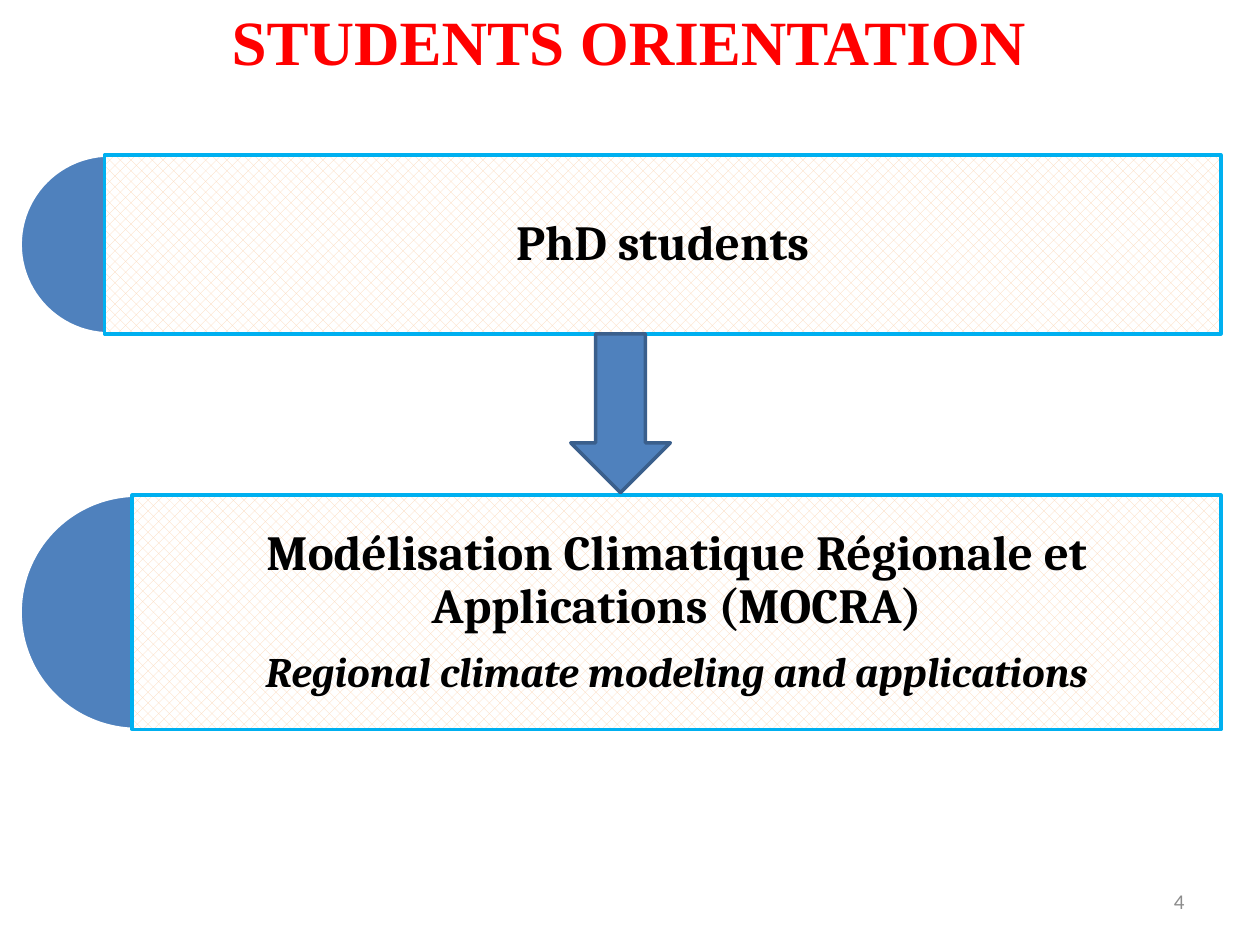
from pptx import Presentation
from pptx import util as u
from pptx.dml.color import RGBColor
from pptx.enum import dml, shapes, text

COLORS = {"title": "FF0000", "blue": "4F81BD", "edge": "3A5F8C", "frame": "00B0F0",
          "peach": "FCD5B5", "white": "FFFFFF", "black": "000000", "gray": "8C8C8C"}

deck = Presentation()
deck.slide_width, deck.slide_height = u.Inches(10), u.Inches(7.5)
slide = deck.slides.add_slide(deck.slide_layouts[5])


def rgb(name):
    return RGBColor.from_string(COLORS[name])


def write(paragraph, words, font="Cambria", size=28, color="black", bold=True,
          italic=None, align=text.PP_ALIGN.CENTER, spacing=None, after=None):
    paragraph.alignment = align
    paragraph.line_spacing = spacing
    paragraph.space_after = after
    run = paragraph.add_run()
    run.text = words
    run.font.name, run.font.size = font, u.Pt(size)
    run.font.bold, run.font.italic = bold, italic
    run.font.color.rgb = rgb(color)


heading = slide.shapes.title
heading.left, heading.top = u.Inches(0.49), u.Inches(0.02)
heading.width, heading.height = u.Inches(9), u.Inches(0.6)
heading.text_frame.margin_top = heading.text_frame.margin_bottom = 0
heading.text_frame.vertical_anchor = text.MSO_ANCHOR.MIDDLE
write(heading.text_frame.paragraphs[0], "STUDENTS ORIENTATION",
      font="Times New Roman", size=36, color="title")

left, right = 0.16, 9.69
bands = [
    (3.93, 1.86, 1.05, [("Modélisation Climatique Régionale et Applications (MOCRA)", 28, None),
                        ("Regional climate modeling and applications", 24, True)]),
    (1.23, 1.42, 0.83, [("PhD students", 28, None)]),
]
for top, height, panel_left, lines in bands:
    half_disc = slide.shapes.add_shape(
        shapes.MSO_SHAPE.PIE, u.Inches(left), u.Inches(top), u.Inches(height), u.Inches(height))
    half_disc.adjustments[0], half_disc.adjustments[1] = 54, 162
    half_disc.fill.solid()
    half_disc.fill.fore_color.rgb = rgb("blue")
    half_disc.line.color.rgb = rgb("white")

    panel = slide.shapes.add_shape(
        shapes.MSO_SHAPE.RECTANGLE, u.Inches(panel_left), u.Inches(top),
        u.Inches(right - panel_left), u.Inches(height))
    panel.fill.patterned()
    panel.fill.pattern = dml.MSO_PATTERN.from_xml("pct40")
    panel.fill.fore_color.rgb = rgb("peach")
    panel.fill.back_color.rgb = rgb("white")
    panel.line.color.rgb = rgb("frame")

    for part in (half_disc, panel):
        part.line.width = u.Pt(2)
        part.shadow.inherit = False

    frame = panel.text_frame
    frame.word_wrap = True
    frame.vertical_anchor = text.MSO_ANCHOR.MIDDLE
    frame.margin_left = frame.margin_right = u.Inches(0.12)
    frame.margin_top = frame.margin_bottom = u.Inches(0.12)
    for index, (words, size, italic) in enumerate(lines):
        paragraph = frame.add_paragraph() if index else frame.paragraphs[0]
        write(paragraph, words, size=size, italic=italic,
              spacing=0.9, after=u.Pt(size * 0.35))

arrow = slide.shapes.add_shape(
    shapes.MSO_SHAPE.DOWN_ARROW, u.Inches(4.53), u.Inches(2.65), u.Inches(0.79), u.Inches(1.26))
arrow.shadow.inherit = False
arrow.fill.solid()
arrow.fill.fore_color.rgb = rgb("blue")
arrow.line.color.rgb = rgb("edge")
arrow.line.width = u.Pt(2)

page_number = slide.shapes.add_textbox(
    u.Inches(7.17), u.Inches(6.95), u.Inches(2.33), u.Inches(0.4)).text_frame
page_number.word_wrap = True
page_number.vertical_anchor = text.MSO_ANCHOR.MIDDLE
write(page_number.paragraphs[0], "4", font="Calibri", size=12, color="gray",
      bold=False, align=text.PP_ALIGN.RIGHT)

deck.save("out.pptx")
